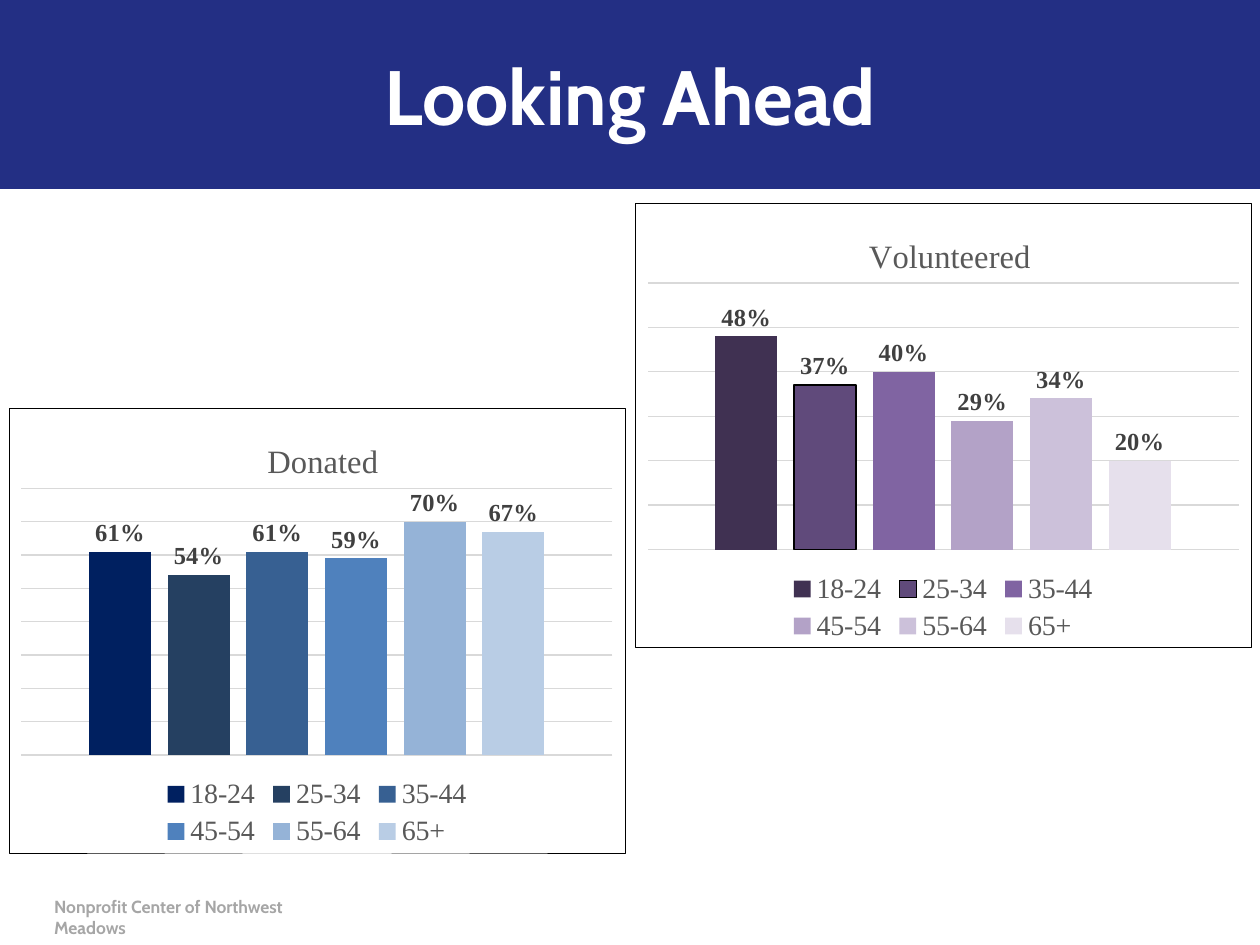
from lxml import etree
from pptx import Presentation
from pptx import util as u
from pptx.chart.data import CategoryChartData
from pptx.dml.color import RGBColor
from pptx.enum import chart as ch, shapes, text
from pptx.oxml.ns import qn

W, H = 10, 7.5
TITLE, FOOTER = "Looking Ahead", "Nonprofit Center of Northwest Meadows"
AGES = ["18-24", "25-34", "35-44", "45-54", "55-64", "65+"]
CHARTS = [
    {"title": "Donated", "title_x": 0.41, "at": (0.07, 3.24), "max": 0.8,
     "values": [0.61, 0.54, 0.61, 0.59, 0.7, 0.67], "outlined": [],
     "colors": ["002060", "254061", "376092", "4F81BD", "95B3D7", "B9CDE5"]},
    {"title": "Volunteered", "title_x": 0.37, "at": (5.04, 1.61), "max": 0.6,
     "values": [0.48, 0.37, 0.4, 0.29, 0.34, 0.2], "outlined": ["25-34"],
     "colors": ["403152", "604A7B", "8064A2", "B3A2C7", "CCC1DA", "E6E0EC"]},
]
CHART_SIZE = (4.89, 3.53)
SERIF, SANS = "Times New Roman", "Cabin"


def rgb(value):
    return RGBColor.from_string(value)


def set_font(font, size, color, name, bold=False):
    font.size, font.name, font.bold = u.Pt(size), name, bold
    font.color.rgb = rgb(color)


def set_line(line, color, width):
    line.color.rgb = rgb(color)
    line.width = u.Pt(width)


def set_layout(parent, index, **values):
    for old in parent.findall(qn("c:layout")):
        parent.remove(old)
    layout = etree.Element(qn("c:layout"))
    manual = etree.SubElement(layout, qn("c:manualLayout"))
    for tag, value in values.items():
        etree.SubElement(manual, qn("c:" + tag)).set("val", str(value))
    parent.insert(index, layout)


def add_text(s, box, words, size, color, align, anchor, inset):
    tf = s.shapes.add_textbox(*map(u.Inches, box)).text_frame
    tf.word_wrap, tf.vertical_anchor = True, anchor
    tf.margin_left = tf.margin_right = u.Inches(inset)
    tf.margin_top = tf.margin_bottom = u.Inches(0.05)
    tf.text = words
    p = tf.paragraphs[0]
    p.alignment = align
    set_font(p.runs[0].font, size, color, SANS, True)


def add_column_chart(s, item):
    data = CategoryChartData(number_format="0%")
    data.categories = ["1"]
    for age, value in zip(AGES, item["values"]):
        data.add_series(age, [value])
    box = map(u.Inches, item["at"] + CHART_SIZE)
    chart = s.shapes.add_chart(ch.XL_CHART_TYPE.COLUMN_CLUSTERED, *box, data).chart
    set_font(chart.font, 10, "000000", SERIF)

    chart.has_title = True
    tf = chart.chart_title.text_frame
    tf.text = item["title"]
    set_font(tf.paragraphs[0].runs[0].font, 18.6, "595959", SERIF)
    root = chart.element.find(qn("c:chart"))
    set_layout(root.find(qn("c:title")), 1, xMode="edge", yMode="edge",
               x=item["title_x"], y=0.06)
    set_layout(root.find(qn("c:plotArea")), 0, layoutTarget="inner", xMode="edge",
               yMode="edge", x=0.02, y=0.18, w=0.96, h=0.6)

    chart.has_legend = True
    chart.legend.position = ch.XL_LEGEND_POSITION.BOTTOM
    chart.legend.include_in_layout = False
    set_font(chart.legend.font, 16, "595959", SERIF)

    chart.category_axis.visible = False
    axis = chart.value_axis
    axis.visible, axis.has_major_gridlines = False, True
    axis.minimum_scale, axis.maximum_scale, axis.major_unit = 0, item["max"], 0.1
    set_line(axis.major_gridlines.format.line, "D9D9D9", 0.75)

    plot = chart.plots[0]
    plot.gap_width, plot.overlap, plot.vary_by_categories = 219, -27, False
    for series, color in zip(plot.series, item["colors"]):
        series.format.fill.solid()
        series.format.fill.fore_color.rgb = rgb(color)
        if series.name in item["outlined"]:
            set_line(series.format.line, "000000", 0.75)
        labels = series.data_labels
        labels.show_value = True
        labels.number_format, labels.number_format_is_linked = "0%", False
        labels.position = ch.XL_LABEL_POSITION.OUTSIDE_END
        set_font(labels.font, 14, "404040", SERIF, True)

    frame = etree.fromstring(
        '<c:spPr xmlns:c="http://schemas.openxmlformats.org/drawingml/2006/chart" '
        'xmlns:a="http://schemas.openxmlformats.org/drawingml/2006/main">'
        '<a:solidFill><a:srgbClr val="FFFFFF"/></a:solidFill><a:ln w="3175">'
        '<a:solidFill><a:srgbClr val="000000"/></a:solidFill></a:ln></c:spPr>')
    root.addnext(frame)


def main():
    """Build the slide with a title band, two age-group charts and a footer."""
    prs = Presentation()
    prs.slide_width, prs.slide_height = u.Inches(W), u.Inches(H)
    s = prs.slides.add_slide(prs.slide_layouts[6])
    band = s.shapes.add_shape(shapes.MSO_SHAPE.RECTANGLE, 0, 0, u.Inches(W), u.Inches(H / 5))
    band.shadow.inherit = False
    band.fill.solid()
    band.fill.fore_color.rgb = rgb("232F84")
    band.line.fill.background()
    add_text(s, (0.38, 7.06, 2.32, 0.27), FOOTER, 10, "A6A6A6",
             text.PP_ALIGN.LEFT, text.MSO_ANCHOR.TOP, 0.05)
    add_text(s, (0.69, 0.03, 8.62, 1.45), TITLE, 44, "FFFFFF",
             text.PP_ALIGN.CENTER, text.MSO_ANCHOR.MIDDLE, 0.1)
    for item in CHARTS:
        add_column_chart(s, item)
    prs.save("out.pptx")


if __name__ == "__main__":
    main()
